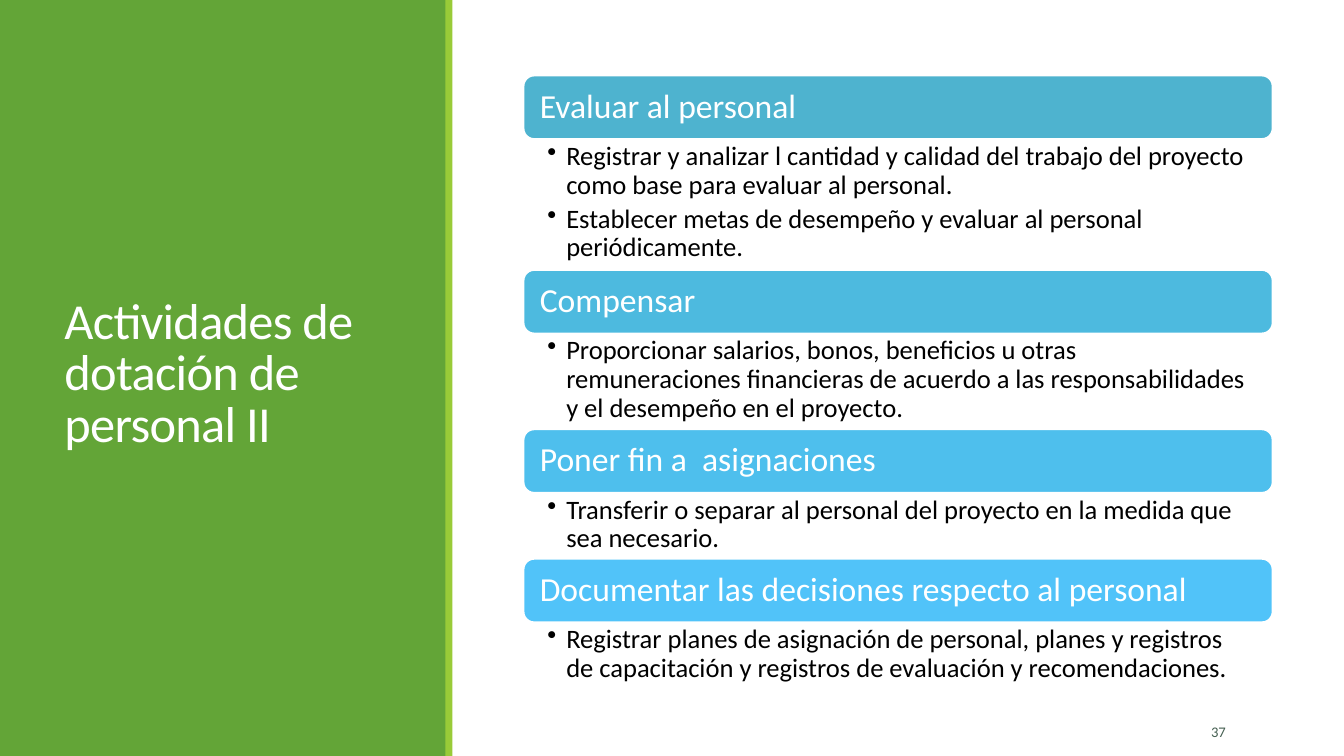
from lxml import etree
from pptx import Presentation
from pptx.dml.color import RGBColor
from pptx.enum import shapes, text
from pptx.oxml.ns import qn
from pptx.util import Pt

GREEN, LIME, WHITE, BLACK, SLATE = "63A537", "99CB38", "FFFFFF", "000000", "455F51"
BAR_HEIGHT = 45.3

# heading, bar colour, height of the body, bullets
ACTIVITIES = [
    ("Evaluar al personal", "4EB3CF", 93.6, [
        "Registrar y analizar l cantidad y calidad del trabajo del proyecto "
        "como base para evaluar al personal.",
        "Establecer metas de desempeño y evaluar al personal periódicamente."]),
    ("Compensar", "4DBADF", 68.5, [
        "Proporcionar salarios, bonos, beneficios u otras remuneraciones financieras "
        "de acuerdo a las responsabilidades y el desempeño en el proyecto."]),
    ("Poner fin a  asignaciones", "4EBFED", 47.2, [
        "Transferir o separar al personal del proyecto en la medida que sea necesario."]),
    ("Documentar las decisiones respecto al personal", "51C3F9", 47.2, [
        "Registrar planes de asignación de personal, planes y registros de capacitación "
        "y registros de evaluación y recomendaciones."]),
]


def colour(value):
    return RGBColor.from_string(value)


def add_block(slide, box, fill, line=None, kind=shapes.MSO_SHAPE.RECTANGLE):
    block = slide.shapes.add_shape(kind, *map(Pt, box))
    block.shadow.inherit = False
    block.fill.solid()
    block.fill.fore_color.rgb = colour(fill)
    if line:
        block.line.color.rgb = colour(line)
        block.line.width = Pt(1.25)
    else:
        block.line.fill.background()
    return block


def add_box(slide, box):
    return slide.shapes.add_textbox(*map(Pt, box))


def add_bullet(paragraph, indent):
    properties = paragraph._p.get_or_add_pPr()
    properties.set("marL", str(Pt(indent)))
    properties.set("indent", str(-Pt(indent)))
    etree.SubElement(properties, qn("a:buChar")).set("char", "•")


def write(shape, *lines, size, ink, insets=(7.2, 3.6, 7.2, 3.6), middle=True,
          align=text.PP_ALIGN.LEFT, spacing=0.9, after=0, bullet_indent=0, tracking=0):
    """Fill a shape with one paragraph per line; insets run left, top, right, bottom."""
    frame = shape.text_frame
    frame.word_wrap = True
    frame.auto_size = text.MSO_AUTO_SIZE.NONE
    frame.vertical_anchor = text.MSO_ANCHOR.MIDDLE if middle else text.MSO_ANCHOR.TOP
    frame.margin_left, frame.margin_top, frame.margin_right, frame.margin_bottom = map(Pt, insets)
    for index, line in enumerate(lines):
        paragraph = frame.add_paragraph() if index else frame.paragraphs[0]
        paragraph.alignment = align
        paragraph.line_spacing = spacing
        paragraph.space_after = Pt(after)
        if bullet_indent:
            add_bullet(paragraph, bullet_indent)
        run = paragraph.add_run()
        run.text = line
        run.font.name = "Calibri"
        run.font.size = Pt(size)
        run.font.color.rgb = colour(ink)
        if tracking:
            run.font._element.set("spc", str(round(tracking * 100)))


def title_panel(slide, left, top, width, height):
    add_block(slide, (left, top, width, height), GREEN)
    add_block(slide, (left + width - 0.8, top, 5, height), LIME)
    title = add_box(slide, (left + 39, top + 41, width - 76.4, height - 85.6))
    write(title, "Actividades de dotación de personal II", size=36, ink=WHITE,
          spacing=0.85, tracking=-0.5)


def activity_list(slide, left, top, width):
    for heading, fill, body_height, bullets in ACTIVITIES:
        bar = add_block(slide, (left, top, width, BAR_HEIGHT), fill, WHITE,
                        shapes.MSO_SHAPE.ROUNDED_RECTANGLE)
        write(bar, heading, size=24, ink=WHITE, insets=(9.4, 7.2, 9.4, 7.2))
        top += BAR_HEIGHT
        body = add_box(slide, (left, top, width, body_height))
        write(body, *bullets, size=19, ink=BLACK, insets=(17, 2.4, 13.5, 2.4),
              middle=False, after=3.8, bullet_indent=13.5)
        top += body_height


def page_number(slide, left, top, width, height):
    write(add_box(slide, (left, top, width, height)), "37", size=10.5, ink=SLATE,
          align=text.PP_ALIGN.RIGHT, spacing=1.0, after=6)


def main():
    deck = Presentation()
    deck.slide_width, deck.slide_height = Pt(960), Pt(540)
    slide = deck.slides.add_slide(deck.slide_layouts[6])
    slide.background.fill.solid()
    slide.background.fill.fore_color.rgb = colour(WHITE)
    title_panel(slide, 0, 0, 319, 540)
    page_number(slide, 797, 508.5, 85.7, 28.8)
    activity_list(slide, 374, 54, 535)
    deck.save("out.pptx")


if __name__ == "__main__":
    main()
